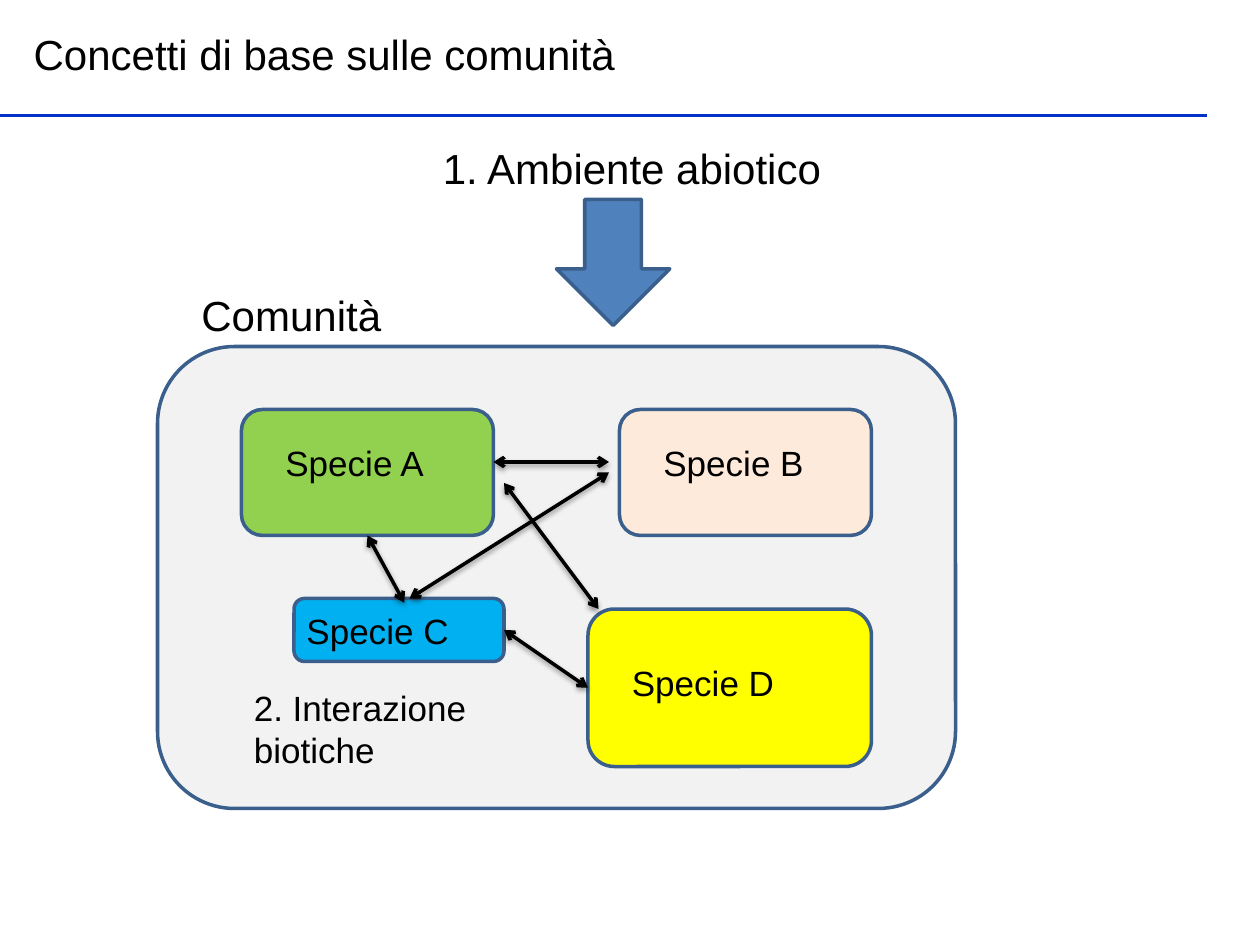
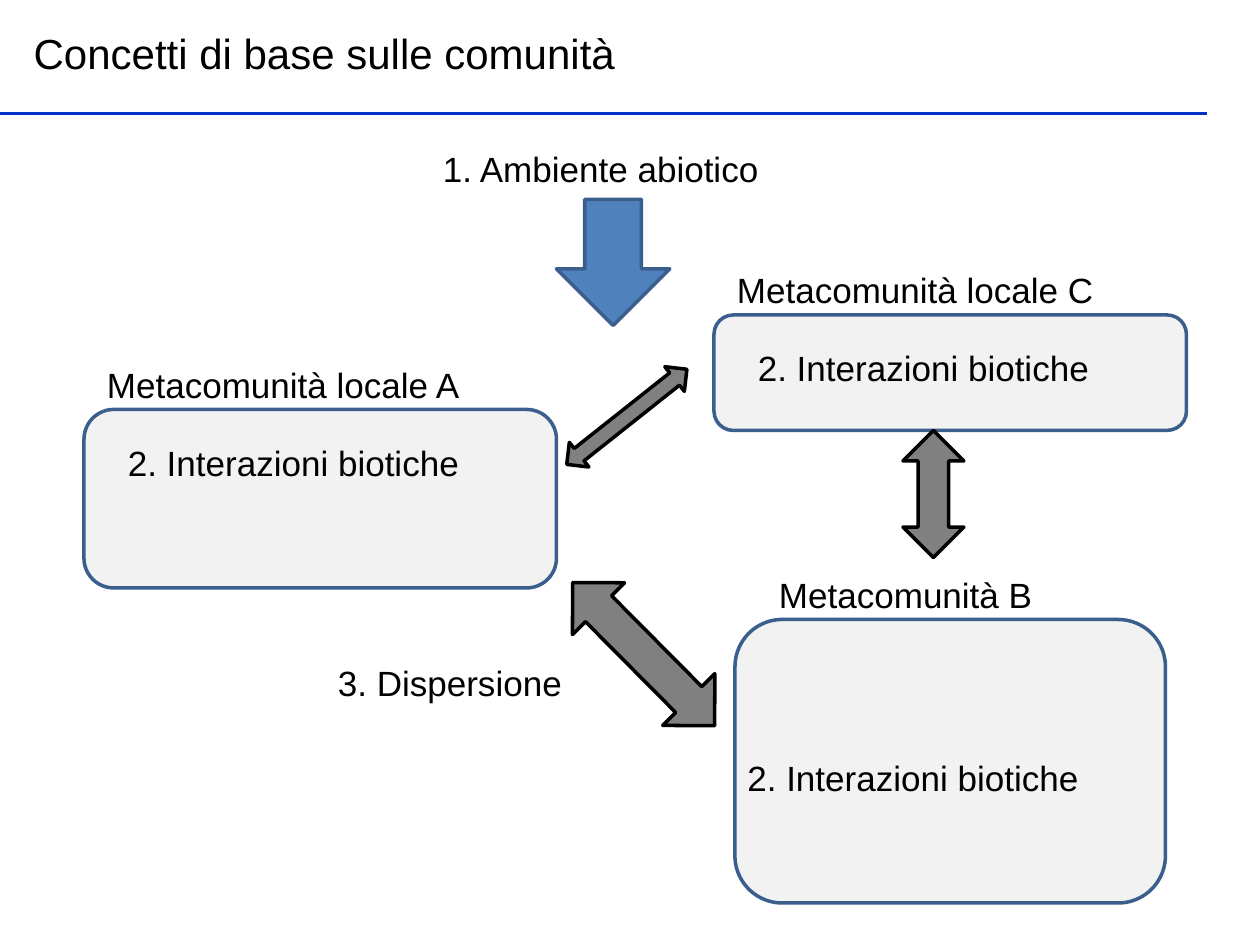
from lxml.etree import SubElement
from pptx import Presentation
from pptx.dml.color import RGBColor
from pptx.enum.shapes import MSO_CONNECTOR, MSO_SHAPE
from pptx.enum.text import MSO_ANCHOR, MSO_AUTO_SIZE, PP_ALIGN
from pptx.oxml.ns import qn
from pptx.util import Inches, Pt

COLORS = {
    "text": "000000", "rule": "0332C9", "outline": "3A5F8C", "abiotic": "4F81BD",
    "community": "F2F2F2", "dispersal": "808080", "black": "000000",
    "A": "92D050", "B": "FDEADA", "C": "00B0F0", "D": "FFFF00",
}
RGB = {name: RGBColor.from_string(value) for name, value in COLORS.items()}
FONT = "Arial"
LARGE, NORMAL = Pt(24), Pt(20)

prs = Presentation()
prs.slide_width, prs.slide_height = Inches(10), Inches(7.5)

# Grid of 120 columns by 90 rows
COL, ROW = prs.slide_width / 120, prs.slide_height / 90


def add_block(slide, kind, area, fill, outline="outline", rotation=0):
    """Outlined preset shape; area is left, top, width, height on the grid."""
    left, top, width, height = area
    block = slide.shapes.add_shape(kind, int(left * COL), int(top * ROW),
                                   int(width * COL), int(height * ROW))
    block.shadow.inherit = False
    block.fill.solid()
    block.fill.fore_color.rgb = RGB[fill]
    block.line.color.rgb = RGB[outline]
    block.line.width = Pt(2)
    block.rotation = rotation
    return block


def add_line(slide, start, end, color):
    """Straight line between two grid points; returns it with its effect list."""
    line = slide.shapes.add_connector(
        MSO_CONNECTOR.STRAIGHT, int(start[0] * COL), int(start[1] * ROW),
        int(end[0] * COL), int(end[1] * ROW))
    line.line.color.rgb = RGB[color]
    line.line.width = Pt(2)
    return line, SubElement(line._element.spPr, qn("a:effectLst"))


# Shared parts: title, rule and arrow of the abiotic environment
community_slide, meta_slide = [
    prs.slides.add_slide(prs.slide_layouts[5]) for _ in range(2)]

for slide, title_top, rule_row in ((community_slide, 2.16, 11), (meta_slide, 2, 10.8)):
    title = slide.shapes.title
    title.left, title.top = int(2 * COL), int(title_top * ROW)
    title.width, title.height = int(102 * COL), int(6 * ROW)
    title.text_frame.vertical_anchor = MSO_ANCHOR.MIDDLE
    heading = title.text_frame.paragraphs[0]
    heading.alignment = PP_ALIGN.LEFT
    run = heading.add_run()
    run.text = "Concetti di base sulle comunità"
    run.font.name, run.font.size = FONT, LARGE
    run.font.color.rgb = RGB["text"]
    add_line(slide, (0, rule_row), (115, rule_row), "rule")
    add_block(slide, MSO_SHAPE.DOWN_ARROW, (53, 19, 10.8, 12), "abiotic")

# Slide 1: the community and its species
add_block(community_slide, MSO_SHAPE.ROUNDED_RECTANGLE, (15, 33, 76, 44), "community")
species_areas = {
    "A": (23, 39, 24, 12), "B": (59, 39, 24, 12),
    "C": (28, 57, 20, 6), "D": (56, 58, 27, 15),
}
species = {name: add_block(community_slide, MSO_SHAPE.ROUNDED_RECTANGLE, area, name)
           for name, area in species_areas.items()}

# Interactions: start, end, joined start and joined end (species, side)
interactions = [
    ((47, 44), (58, 44), None, None),
    ((48, 46), (57, 58), None, None),
    ((35, 51), (38.5, 57.4), ("A", 2), None),
    ((39, 57), (58, 45), None, None),
    ((48, 60), (56, 65.5), ("C", 3), ("D", 1)),
]
for start, end, joined_start, joined_end in interactions:
    interaction, effects = add_line(community_slide, start, end, "black")
    if joined_start:
        interaction.begin_connect(species[joined_start[0]], joined_start[1])
    if joined_end:
        interaction.end_connect(species[joined_end[0]], joined_end[1])
    outline = interaction._element.spPr.find(qn("a:ln"))
    for tip in ("a:headEnd", "a:tailEnd"):
        SubElement(outline, qn(tip), type="arrow")
    shadow = SubElement(effects, qn("a:outerShdw"), blurRad=str(Pt(3.1)),
                        dist=str(Pt(1.6)), dir="5400000", rotWithShape="0")
    shade = SubElement(shadow, qn("a:srgbClr"), val=COLORS["black"])
    SubElement(shade, qn("a:alpha"), val="38000")

# Slide 2: local metacommunities and the dispersal between them
for area in ((8, 39, 45, 17), (70, 59, 41, 27), (68, 30, 45, 11)):
    add_block(meta_slide, MSO_SHAPE.ROUNDED_RECTANGLE, area, "community")
for area, rotation in (((57.8, 52.7, 7, 19.2), 315.2),
                       ((58.2, 32.4, 3, 14.6), 51.6),
                       ((86, 41, 5.8, 12.1), 0)):
    add_block(meta_slide, MSO_SHAPE.UP_DOWN_ARROW, area, "dispersal", "black", rotation)

# Labels: left, top, width on the grid, size, lines
BIOTIC = "2. Interazioni biotiche"
community_labels = [
    (41, 13, 48, LARGE, ["1. Ambiente abiotico"]),
    (18, 27, 32, LARGE, ["Comunità"]),
    (26, 41.4, 21, NORMAL, ["Specie A"]),
    (62, 41.4, 21, NORMAL, ["Specie B"]),
    (28, 57.4, 21, NORMAL, ["Specie C"]),
    (59, 62.4, 21, NORMAL, ["Specie D"]),
    (23, 64.8, 31, NORMAL, ["2. Interazione", "biotiche"]),
]
meta_labels = [
    (41, 13.4, 48, NORMAL, ["1. Ambiente abiotico"]),
    (9, 34, 44, NORMAL, ["Metacomunità locale A"]),
    (11, 41.4, 41, NORMAL, [BIOTIC]),
    (73, 54, 32, NORMAL, ["Metacomunità B"]),
    (70, 71.4, 41, NORMAL, [BIOTIC]),
    (69, 25, 44, NORMAL, ["Metacomunità locale C"]),
    (71, 32.4, 41, NORMAL, [BIOTIC]),
    (31, 62.4, 31, NORMAL, ["3. Dispersione"]),
]
for slide, labels in ((community_slide, community_labels), (meta_slide, meta_labels)):
    for left, top, width, size, lines in labels:
        height = Inches(0.1) + int(size * 1.2) * len(lines)
        frame = slide.shapes.add_textbox(int(left * COL), int(top * ROW),
                                         int(width * COL), height).text_frame
        frame.word_wrap = True
        frame.auto_size = MSO_AUTO_SIZE.SHAPE_TO_FIT_TEXT
        frame.vertical_anchor = MSO_ANCHOR.MIDDLE
        for number, words in enumerate(lines):
            paragraph = frame.add_paragraph() if number else frame.paragraphs[0]
            run = paragraph.add_run()
            run.text = words
            run.font.name, run.font.size = FONT, size
            run.font.color.rgb = RGB["text"]

prs.save("out.pptx")
